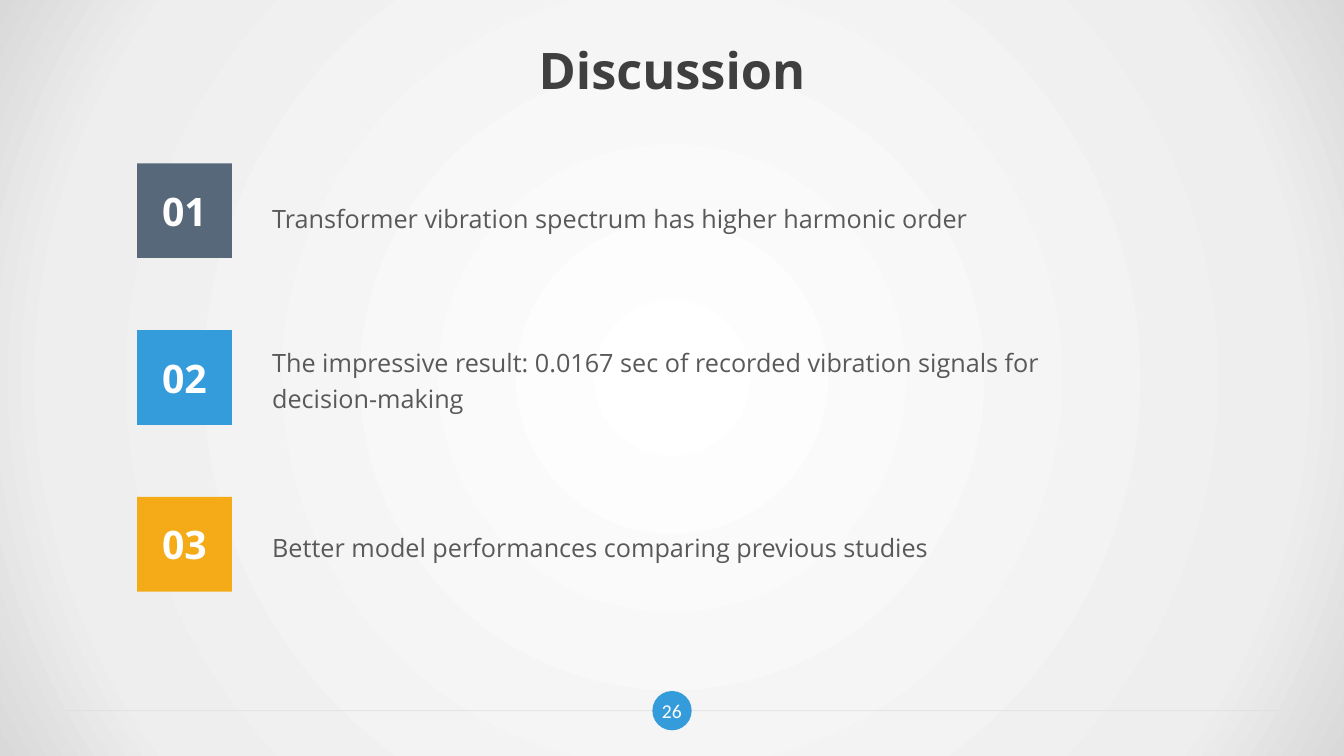
import dataclasses

import lxml.etree
import pptx
import pptx.dml.color
import pptx.enum.shapes
import pptx.enum.text
import pptx.oxml
import pptx.oxml.ns
import pptx.util


@dataclasses.dataclass(frozen=True)
class Theme:
    """Colours, fonts and type sizes of the slide."""
    title: str = "3F3F3F"
    body: str = "595959"
    light: str = "FFFFFF"
    slate: str = "57687B"
    blue: str = "359CDB"
    amber: str = "F4AB17"
    rule: str = "D9D9D9"
    backdrop: tuple = ((0, "FFFFFF"), (81, "EEEEEE"), (100, "D9D9D9"))
    font: str = "Open Sans"
    number_font: str = "Calibri"
    title_size: int = 36
    badge_size: int = 28
    body_size: int = 18
    number_size: int = 14


@dataclasses.dataclass(frozen=True)
class Box:
    """A rectangle in inches."""
    left: float
    top: float
    width: float
    height: float

    def emu(self):
        """Return the four lengths for python-pptx."""
        return [pptx.util.Inches(length) for length in dataclasses.astuple(self)]

    def centred(self, width, height):
        """Return a box of the given size on the same centre."""
        return Box(self.left + (self.width - width) / 2,
                   self.top + (self.height - height) / 2, width, height)


THEME = Theme()
PAGE = Box(0, 0, 13.33, 7.5)
POINTS = (
    ("01", THEME.slate, "Transformer vibration spectrum has higher harmonic order", 1, 9.96, 0.05),
    ("02", THEME.blue, "The impressive result: 0.0167 sec of recorded vibration signals "
     "for decision-making", 2, 9.35, 0),
    ("03", THEME.amber, "Better model performances comparing previous studies", 1, 9.96, 0),
)


def rgb(colour):
    """Turn a hex string into a colour."""
    return pptx.dml.color.RGBColor.from_string(colour)


def write(shape, text, size, colour, font=THEME.font, bold=False, centred=True, spacing=None):
    """Set and format one vertically centred paragraph in a shape."""
    frame = shape.text_frame
    frame.word_wrap = True
    frame.vertical_anchor = pptx.enum.text.MSO_ANCHOR.MIDDLE
    paragraph = frame.paragraphs[0]
    paragraph.text = text
    align = pptx.enum.text.PP_ALIGN
    paragraph.alignment = align.CENTER if centred else align.LEFT
    if spacing:
        paragraph.line_spacing = spacing
    run_font = paragraph.runs[0].font
    run_font.name, run_font.size, run_font.bold = font, pptx.util.Pt(size), bold
    run_font.color.rgb = rgb(colour)


def pad(shape):
    """Widen the insets of a heading or page number."""
    frame = shape.text_frame
    frame.margin_left = frame.margin_right = pptx.util.Inches(0.13)
    frame.margin_top = frame.margin_bottom = pptx.util.Inches(0.07)


def add_block(slide, preset, box, colour):
    """Add a flat filled shape without outline."""
    block = slide.shapes.add_shape(preset, *box.emu())
    block.shadow.inherit = False
    block.fill.solid()
    block.fill.fore_color.rgb = rgb(colour)
    block.line.fill.background()
    return block


def add_backdrop(slide):
    """Fill the background with a circular gradient."""
    slide.background.fill.solid()
    properties = slide.element.find(".//" + pptx.oxml.ns.qn("p:bgPr"))
    stops = "".join(f'<a:gs pos="{share * 1000}"><a:srgbClr val="{colour}"/></a:gs>'
                    for share, colour in THEME.backdrop)
    gradient = pptx.oxml.parse_xml(
        f'<a:gradFill {pptx.oxml.ns.nsdecls("a")} rotWithShape="1"><a:gsLst>{stops}</a:gsLst>'
        '<a:path path="circle"><a:fillToRect l="50000" t="50000" r="50000" b="50000"/></a:path>'
        '</a:gradFill>')
    properties.replace(properties[0], gradient)


def add_footer(slide, box, number):
    """Draw the rule across the box with the page number on its centre."""
    middle = box.top + box.height / 2
    start = Box(box.left, middle, box.left + box.width, middle).emu()
    rule = slide.shapes.add_connector(pptx.enum.shapes.MSO_CONNECTOR.STRAIGHT, *start)
    rule.line.color.rgb = rgb(THEME.rule)
    rule.line.width = pptx.util.Pt(0.75)
    qn = pptx.oxml.ns.qn
    colour = rule.element.find(".//" + qn("a:srgbClr"))
    lxml.etree.SubElement(colour, qn("a:alpha"), val="50000")
    lxml.etree.SubElement(rule.element.spPr, qn("a:effectLst"))

    add_block(slide, pptx.enum.shapes.MSO_SHAPE.OVAL, box.centred(0.39, 0.39), THEME.blue)
    page_number = slide.shapes.add_textbox(*box.centred(0.56, box.height).emu())
    pad(page_number)
    write(page_number, number, THEME.number_size, THEME.light, THEME.number_font)


def add_title(slide, box, text):
    """Write the slide heading."""
    title = slide.shapes.add_textbox(*box.emu())
    pad(title)
    write(title, text, THEME.title_size, THEME.title, bold=True)


def add_points(slide, box, points):
    """Stack numbered badges with statements, measured in badge sides."""
    side = box.height / (1 + 1.76 * (len(points) - 1))
    for row, (number, colour, statement, lines, columns, drop) in enumerate(points):
        cell = Box(box.left, box.top + 1.76 * side * row, side, side)
        badge = add_block(slide, pptx.enum.shapes.MSO_SHAPE.RECTANGLE, cell, colour)
        write(badge, number, THEME.badge_size, THEME.light, bold=True)
        height = (0.09 + 0.38 * lines) * side
        top = cell.top + (side - height) / 2 + drop * side
        label = Box(box.left + 1.32 * side, top, columns * side, height)
        text = slide.shapes.add_textbox(*label.emu())
        write(text, statement, THEME.body_size, THEME.body, centred=False, spacing=1.2)


def main():
    """Build and save the slide."""
    deck = pptx.Presentation()
    deck.slide_width, deck.slide_height = PAGE.emu()[2:]
    slide = deck.slides.add_slide(deck.slide_layouts[6])
    add_backdrop(slide)
    add_footer(slide, Box(0.05 * PAGE.width, 6.84, 0.9 * PAGE.width, 0.42), "26")
    add_title(slide, Box(0.05 * PAGE.width, 0.04 * PAGE.height, 0.9 * PAGE.width, 0.78),
              "Discussion")
    add_points(slide, Box(1.36, 1.62, 10.6, 4.25), POINTS)
    deck.save("out.pptx")


if __name__ == "__main__":
    main()
